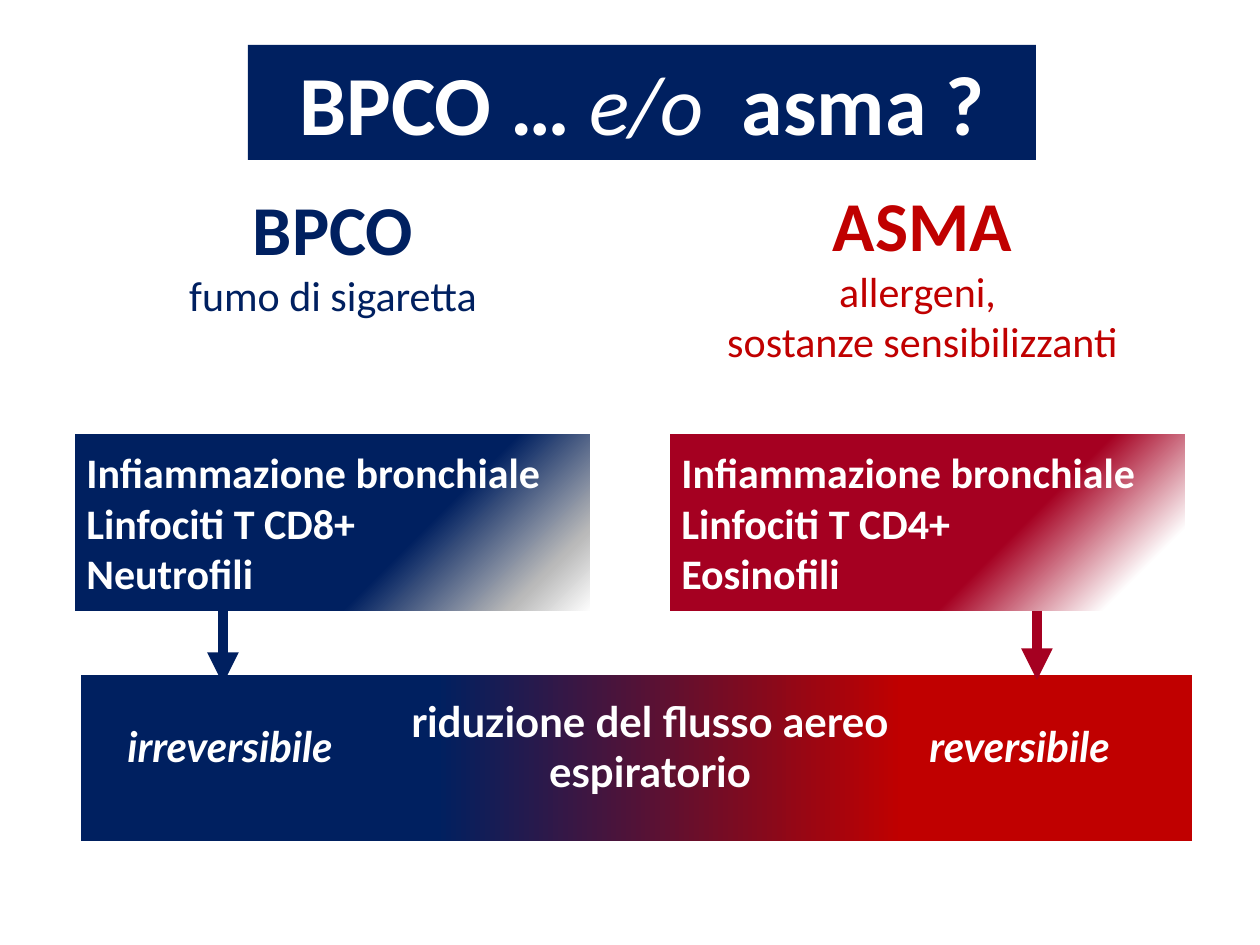
"""Build the slide comparing BPCO and asthma."""
import lxml.etree
import pptx
import pptx.dml.color
import pptx.enum.shapes
import pptx.enum.text
import pptx.oxml
import pptx.oxml.ns
import pptx.util

PX = 914400 / 126
COLORS = {"navy": "002060", "red": "C00000", "crimson": "A50021",
          "grey": "BABABA", "white": "FFFFFF"}
RGB = {name: pptx.dml.color.RGBColor.from_string(c) for name, c in COLORS.items()}
ALIGN = pptx.enum.text.PP_ALIGN
ANCHOR = pptx.enum.text.MSO_ANCHOR
RECT = pptx.enum.shapes.MSO_SHAPE.RECTANGLE
qn = pptx.oxml.ns.qn


def write(s, lines, color, size=24, font="Calibri", bold=True, italic=False,
          align=ALIGN.LEFT, anchor=ANCHOR.TOP):
    tf = s.text_frame
    tf.word_wrap = True
    tf.vertical_anchor = anchor
    tf.text = "\n".join(lines)
    for p in tf.paragraphs:
        p.alignment = align
        for r in p.runs:
            r.font.name = font
            r.font.size = pptx.util.Pt(size)
            r.font.bold = bold
            r.font.italic = italic
            r.font.color.rgb = RGB[color]
    return tf


def fill_gradient(s, stops, angle):
    s.fill.gradient()
    grad = s._element.spPr.find(qn("a:gradFill"))
    grad.find(qn("a:lin")).set("ang", str(angle * 60000))
    gs_list = grad.find(qn("a:gsLst"))
    for gs in list(gs_list):
        gs_list.remove(gs)
    for pos, color in stops:
        gs = lxml.etree.SubElement(gs_list, qn("a:gs"), pos=str(pos * 1000))
        lxml.etree.SubElement(gs, qn("a:srgbClr"), val=COLORS[color])


prs = pptx.Presentation()
prs.slide_width = pptx.util.Inches(10)
prs.slide_height = pptx.util.Inches(7.5)
shapes = prs.slides.add_slide(prs.slide_layouts[6]).shapes

bar = shapes.add_shape(RECT, *[round(v * PX) for v in (81, 675, 1111, 166)])
bar.shadow.inherit = False
bar.line.fill.background()
fill_gradient(bar, [(0, "navy"), (32, "navy"), (74, "red")], 0)

headings = [
    ((669, 175, 507, 205), "red", ["ASMA", "allergeni, ", "sostanze sensibilizzanti"]),
    ((86, 179, 494, 147), "navy", ["BPCO", "fumo di sigaretta"]),
]
for box, color, lines in headings:
    s = shapes.add_textbox(*[round(v * PX) for v in box])
    tf = write(s, lines, color, bold=False, align=ALIGN.CENTER)
    r = tf.paragraphs[0].runs[0]
    r.font.size = pptx.util.Pt(40)
    r.font.bold = True

inflammations = [
    (669, "crimson", "white", ["Linfociti T CD4+", "Eosinofili"]),
    (74, "navy", "grey", ["Linfociti T CD8+", "Neutrofili"]),
]
for x, color, fade, cells in inflammations:
    s = shapes.add_shape(RECT, *[round(v * PX) for v in (x, 433, 517, 179)])
    s.shadow.inherit = False
    s.line.color.rgb = RGB["white"]
    s.line.width = pptx.util.Pt(0.75)
    fill_gradient(s, [(64, color), (88, fade), (100, "white")], 45)
    write(s, ["Infiammazione bronchiale", *cells], "white", anchor=ANCHOR.MIDDLE)

s = shapes.add_textbox(*[round(v * PX) for v in (382, 690, 536, 111)])
write(s, ["riduzione del flusso aereo espiratorio"], "white", font="Lato",
      align=ALIGN.CENTER, anchor=ANCHOR.MIDDLE)

for x, width, label in [(115, 305, "irreversibile"), (917, 273, "reversibile")]:
    s = shapes.add_textbox(*[round(v * PX) for v in (x, 714, width, 63)])
    write(s, [label], "white", font="Lato", italic=True)

for x, bottom, color in [(223, 684, "navy"), (1037, 680, "crimson")]:
    arrow = shapes.add_connector(pptx.enum.shapes.MSO_CONNECTOR.STRAIGHT,
                                 *[round(v * PX) for v in (x, 611, x, bottom)])
    arrow.line.color.rgb = RGB[color]
    arrow.line.width = pptx.util.Pt(6)
    lxml.etree.SubElement(arrow.line._get_or_add_ln(), qn("a:tailEnd"), type="triangle")
    lxml.etree.SubElement(arrow._element.spPr, qn("a:effectLst"))

title = shapes.add_shape(RECT, *[round(v * PX) for v in (248, 45, 788, 115)])
title.shadow.inherit = False
title.fill.solid()
title.fill.fore_color.rgb = RGB["navy"]
title.line.fill.background()
p = write(title, [""], "white", align=ALIGN.CENTER).paragraphs[0]
for text, emphasis in [("BPCO … ", False), ("e/o  ", True), ("asma ?", False)]:
    r = p.add_run()
    r.text = text
    r.font.name = "Calibri"
    r.font.size = pptx.util.Pt(48)
    r.font.bold = not emphasis
    r.font.italic = emphasis
    r.font.color.rgb = RGB["white"]

prs.save("out.pptx")
